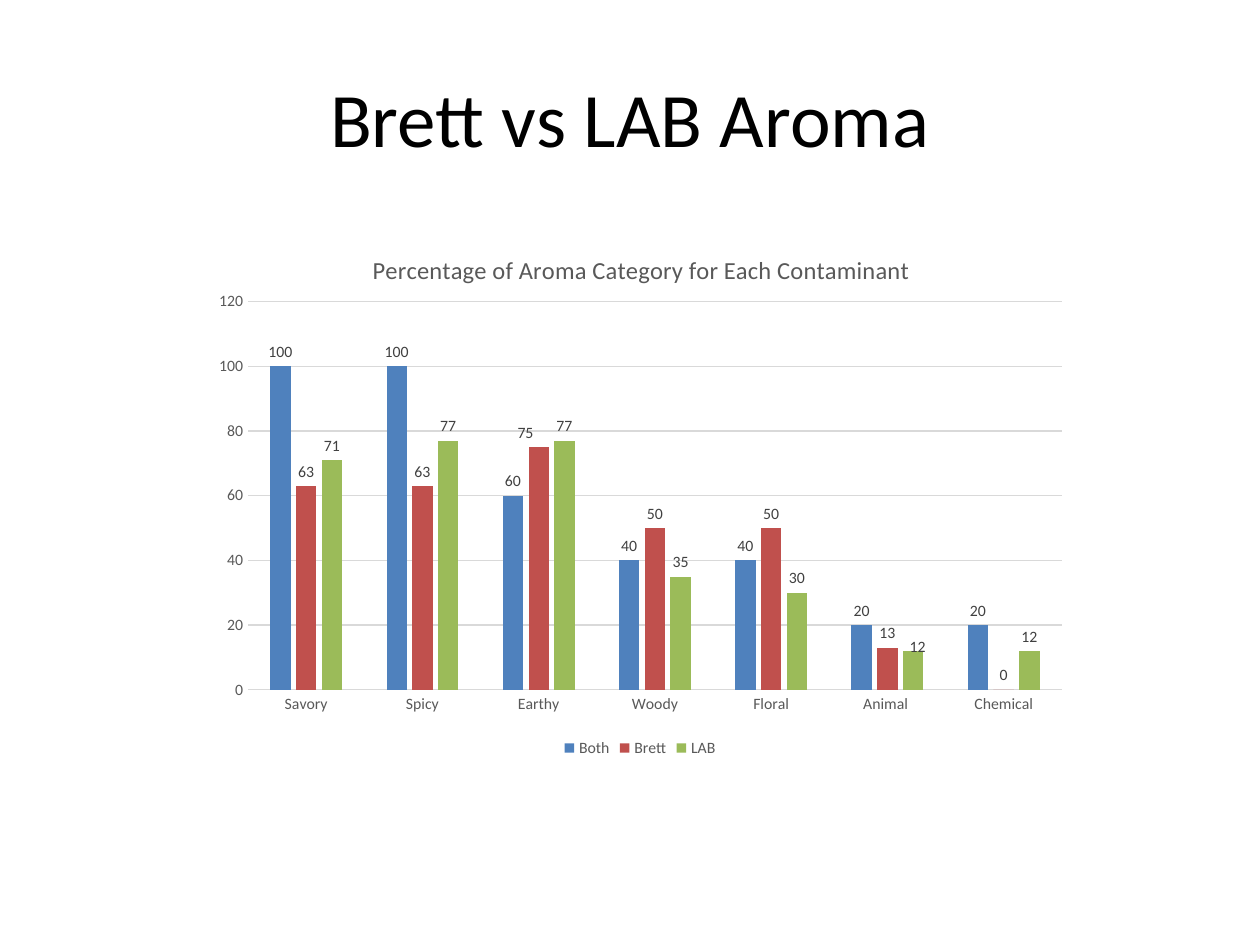
from dataclasses import dataclass

from lxml import etree
from pptx import Presentation
from pptx.chart.data import CategoryChartData
from pptx.dml.color import RGBColor
from pptx.enum.chart import (XL_CHART_TYPE, XL_LABEL_POSITION,
                             XL_LEGEND_POSITION, XL_TICK_MARK)
from pptx.enum.text import MSO_ANCHOR, PP_ALIGN
from pptx.oxml.ns import qn
from pptx.util import Inches, Pt

COLUMN = XL_CHART_TYPE.COLUMN_CLUSTERED
OUTSIDE = XL_LABEL_POSITION.OUTSIDE_END
BOTTOM = XL_LEGEND_POSITION.BOTTOM
NO_TICK = XL_TICK_MARK.NONE
MIDDLE = MSO_ANCHOR.MIDDLE
CENTER = PP_ALIGN.CENTER


@dataclass(frozen=True)
class Theme:
    face: str = "Calibri"
    black: str = "000000"
    gray: str = "595959"
    dark: str = "404040"
    rule: str = "D9D9D9"
    head: int = 44
    title: int = 14
    base: int = 10
    small: int = 9


THEME = Theme()
GROUPS = ["Savory", "Spicy", "Earthy", "Woody", "Floral", "Animal ", "Chemical"]
SERIES = [
    ("Both", "4F81BD", (100, 100, 60, 40, 40, 20, 20)),
    ("Brett", "C0504D", (63, 63, 75, 50, 50, 13, 0)),
    ("LAB", "9BBB59", (71, 77, 77, 35, 30, 12, 12)),
]
SHIFTS = [("Brett", "Earthy", -0.015, 0), ("LAB", "Animal ", 0.005, 0.02)]


def style(font, size, color):
    font.name = THEME.face
    font.size = Pt(size)
    font.bold = False
    font.color.rgb = RGBColor.from_string(color)


def draw(line):
    line.color.rgb = RGBColor.from_string(THEME.rule)
    line.width = Pt(0.75)


def place(node, index, **values):
    for old in node.findall(qn("c:layout")):
        node.remove(old)
    layout = etree.Element(qn("c:layout"))
    manual = etree.SubElement(layout, qn("c:manualLayout"))
    for name, value in values.items():
        etree.SubElement(manual, qn("c:" + name)).set("val", str(value))
    node.insert(index, layout)


def add_title(slide, text):
    title = slide.shapes.title
    title.left, title.top = Inches(0.5), Inches(0.3)
    title.width, title.height = Inches(9), Inches(1.25)
    title.text_frame.text = text
    title.text_frame.vertical_anchor = MIDDLE
    para = title.text_frame.paragraphs[0]
    para.alignment = CENTER
    style(para.font, THEME.head, THEME.black)


def set_axes(chart):
    for axis in (chart.category_axis, chart.value_axis):
        axis.major_tick_mark = axis.minor_tick_mark = NO_TICK
        style(axis.tick_labels.font, THEME.small, THEME.gray)
    draw(chart.category_axis.format.line)
    axis = chart.value_axis
    axis.minimum_scale, axis.maximum_scale, axis.major_unit = 0, 120, 20
    axis.format.line.fill.background()
    axis.has_major_gridlines = True
    draw(axis.major_gridlines.format.line)


def set_bars(plot):
    plot.gap_width, plot.overlap = 219, -27
    plot.vary_by_categories = False
    for bars, (_, color, _) in zip(plot.series, SERIES):
        bars.format.fill.solid()
        bars.format.fill.fore_color.rgb = RGBColor.from_string(color)
        bars.invert_if_negative = False
        labels = bars.data_labels
        labels.show_value = True
        labels.position = OUTSIDE
        style(labels.font, THEME.small, THEME.dark)


def shift_labels(chart):
    names = [name for name, _, _ in SERIES]
    for name, group, x, y in SHIFTS:
        bars = chart.plots[0].series[names.index(name)]
        label = bars.points[GROUPS.index(group)].data_label
        label.position = OUTSIDE
        style(label.font, THEME.small, THEME.dark)
        node = bars.data_labels.font and chart.element.xpath(
            f".//c:ser[c:idx/@val={names.index(name)}]//c:dLbl")[0]
        place(node, 1, x=x, y=y)


def add_chart(slide):
    data = CategoryChartData()
    data.categories = GROUPS
    for name, _, values in SERIES:
        data.add_series(name, values)
    chart = slide.shapes.add_chart(COLUMN, Inches(1.6), Inches(1.76),
                                   Inches(6.96), Inches(4.29), data).chart
    style(chart.font, THEME.base, THEME.black)
    frame = chart.chart_title.text_frame
    frame.text = "Percentage of Aroma Category for Each Contaminant"
    style(frame.paragraphs[0].font, THEME.title, THEME.gray)
    chart.has_legend = True
    chart.legend.position = BOTTOM
    chart.legend.include_in_layout = False
    style(chart.legend.font, THEME.small, THEME.gray)
    set_axes(chart)
    set_bars(chart.plots[0])
    shift_labels(chart)
    place(chart.element.xpath(".//c:chart/c:title")[0], 1,
          xMode="edge", yMode="edge", x=0.19, y=0.05)
    place(chart.element.xpath(".//c:plotArea")[0], 0, layoutTarget="inner",
          xMode="edge", yMode="edge", x=0.053, y=0.148, w=0.928, h=0.718)


def main():
    deck = Presentation()
    deck.slide_width, deck.slide_height = Inches(10), Inches(7.5)
    slide = deck.slides.add_slide(deck.slide_layouts[5])
    add_title(slide, "Brett vs LAB Aroma")
    add_chart(slide)
    deck.save("out.pptx")


if __name__ == "__main__":
    main()
